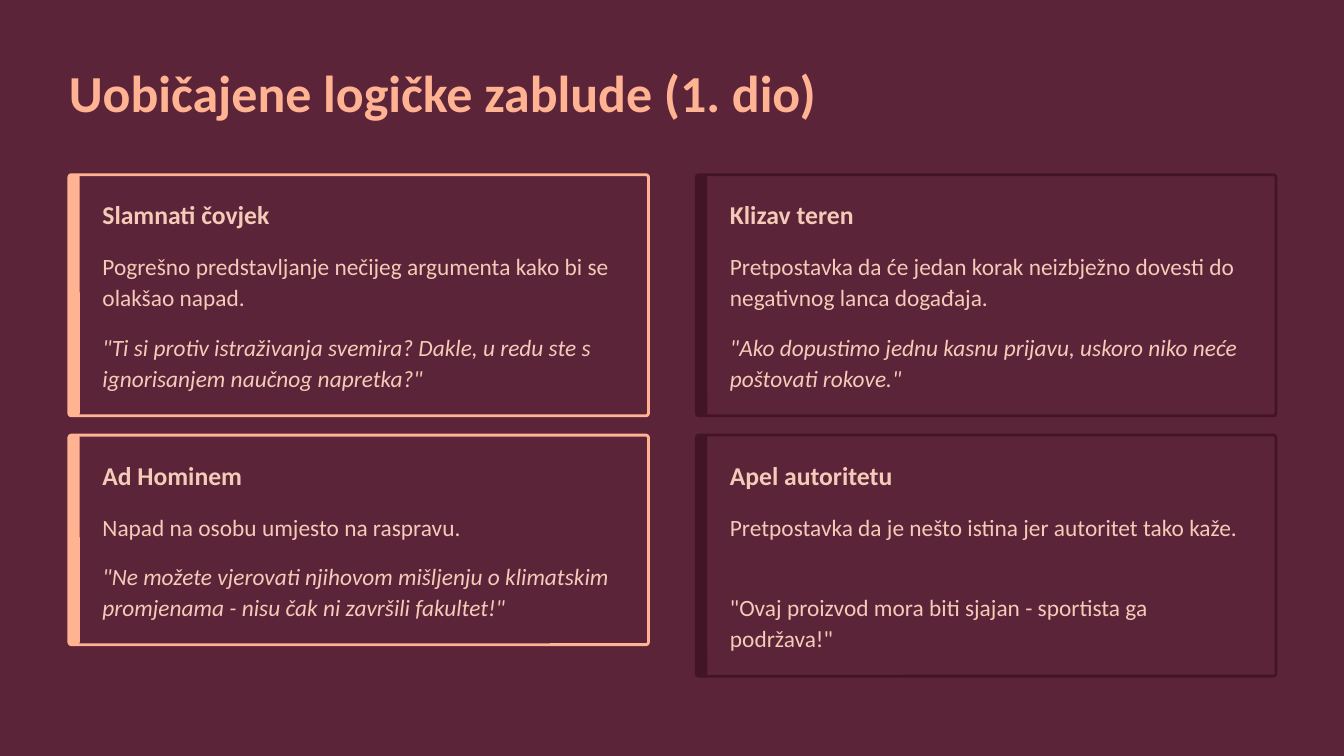
import pptx
import pptx.dml.color
import pptx.enum.shapes
import pptx.enum.text
import pptx.util
from dataclasses import dataclass

TITLE = "Uobičajene logičke zablude (1. dio)"

CARDS = [
    {"column": 0, "row": 0, "heading": "Slamnati čovjek",
     "body": "Pogrešno predstavljanje nečijeg argumenta kako bi se olakšao napad.", "body_lines": 2,
     "quote": '"Ti si protiv istraživanja svemira? Dakle, u redu ste s ignorisanjem naučnog napretka?"',
     "italic": True},
    {"column": 0, "row": 1, "heading": "Ad Hominem",
     "body": "Napad na osobu umjesto na raspravu.", "body_lines": 1,
     "quote": '"Ne možete vjerovati njihovom mišljenju o klimatskim promjenama - nisu čak ni završili fakultet!"',
     "italic": True},
    {"column": 1, "row": 0, "heading": "Klizav teren",
     "body": "Pretpostavka da će jedan korak neizbježno dovesti do negativnog lanca događaja.", "body_lines": 2,
     "quote": '"Ako dopustimo jednu kasnu prijavu, uskoro niko neće poštovati rokove."',
     "italic": True},
    {"column": 1, "row": 1, "heading": "Apel autoritetu",
     "body": "Pretpostavka da je nešto istina jer autoritet tako kaže.", "body_lines": 2,
     "quote": '"Ovaj proizvod mora biti sjajan - sportista ga podržava!"',
     "italic": False},
]


@dataclass(frozen=True)
class Theme:
    font: str = "Calibri"
    background: str = "5C2438"
    title: str = "FFB393"
    text: str = "F4CAB8"
    accents: tuple = ("FFB393", "421424")
    title_size: float = 44.5
    heading_size: float = 22
    body_size: float = 20
    title_spacing: float = 56
    heading_spacing: float = 28
    body_spacing: float = 26.5
    border: float = 2.4


THEME = Theme()
WIDTH, HEIGHT = 16, 9
MARGIN, TOP = 0.82, 2.08
CARD_WIDTH, COLUMN_STEP, ROW_STEP = 6.9, 7.47, 3.1
BAR_WIDTH, RADIUS = 0.13, 0.03
INDENT, TEXT_WIDTH = 0.4, 6.23
PADDING, BODY_OFFSET, QUOTE_GAP = 0.27, 0.89, 0.21
HEADING_HEIGHT, TWO_LINES = 0.39, 0.75


def color(value):
    return pptx.dml.color.RGBColor.from_string(value)


def inches(*lengths):
    return [pptx.util.Inches(length) for length in lengths]


def write(shape, text, size, spacing, ink=THEME.text, bold=False, italic=False):
    frame = shape.text_frame
    frame.word_wrap = True
    frame.auto_size = pptx.enum.text.MSO_AUTO_SIZE.NONE
    frame.vertical_anchor = pptx.enum.text.MSO_ANCHOR.TOP
    frame.margin_left = frame.margin_right = frame.margin_top = frame.margin_bottom = 0
    frame.text = text
    paragraph = frame.paragraphs[0]
    paragraph.alignment = pptx.enum.text.PP_ALIGN.LEFT
    paragraph.line_spacing = pptx.util.Pt(spacing)
    font = paragraph.runs[0].font
    font.name, font.size = THEME.font, pptx.util.Pt(size)
    font.bold, font.italic = bold, italic
    font.color.rgb = color(ink)


def add_panel(slide, left, top, width, height, fill, line=None):
    panel = slide.shapes.add_shape(
        pptx.enum.shapes.MSO_SHAPE.ROUNDED_RECTANGLE, *inches(left, top, width, height))
    panel.adjustments[0] = RADIUS / min(width, height)
    panel.shadow.inherit = False
    panel.fill.solid()
    panel.fill.fore_color.rgb = color(fill)
    if line:
        panel.line.color.rgb = color(line)
        panel.line.width = pptx.util.Pt(THEME.border)
    else:
        panel.line.fill.background()


def add_card(slide, card):
    left = MARGIN + card["column"] * COLUMN_STEP
    top = TOP + card["row"] * ROW_STEP
    body_height = card["body_lines"] * TWO_LINES / 2
    quote_offset = BODY_OFFSET + body_height + QUOTE_GAP
    height = quote_offset + TWO_LINES + PADDING
    accent = THEME.accents[card["column"]]
    add_panel(slide, left, top, CARD_WIDTH, height, THEME.background, accent)
    add_panel(slide, left, top, BAR_WIDTH, height, accent)

    body_format = {"size": THEME.body_size, "spacing": THEME.body_spacing}
    heading_format = {"size": THEME.heading_size, "spacing": THEME.heading_spacing, "bold": True}
    parts = [
        (card["heading"], PADDING, HEADING_HEIGHT, heading_format),
        (card["body"], BODY_OFFSET, body_height, body_format),
        (card["quote"], quote_offset, TWO_LINES, {**body_format, "italic": card["italic"]}),
    ]
    for text, offset, part_height, text_format in parts:
        box = slide.shapes.add_textbox(*inches(left + INDENT, top + offset, TEXT_WIDTH, part_height))
        write(box, text, **text_format)


def main():
    presentation = pptx.Presentation()
    presentation.slide_width, presentation.slide_height = inches(WIDTH, HEIGHT)
    slide = presentation.slides.add_slide(presentation.slide_layouts[5])
    slide.background.fill.solid()
    slide.background.fill.fore_color.rgb = color(THEME.background)

    title = slide.shapes.title
    title.left, title.top, title.width, title.height = inches(MARGIN, 0.69, 9.99, 0.78)
    write(title, TITLE, THEME.title_size, THEME.title_spacing, ink=THEME.title, bold=True)
    for card in CARDS:
        add_card(slide, card)
    presentation.save("out.pptx")


if __name__ == "__main__":
    main()
